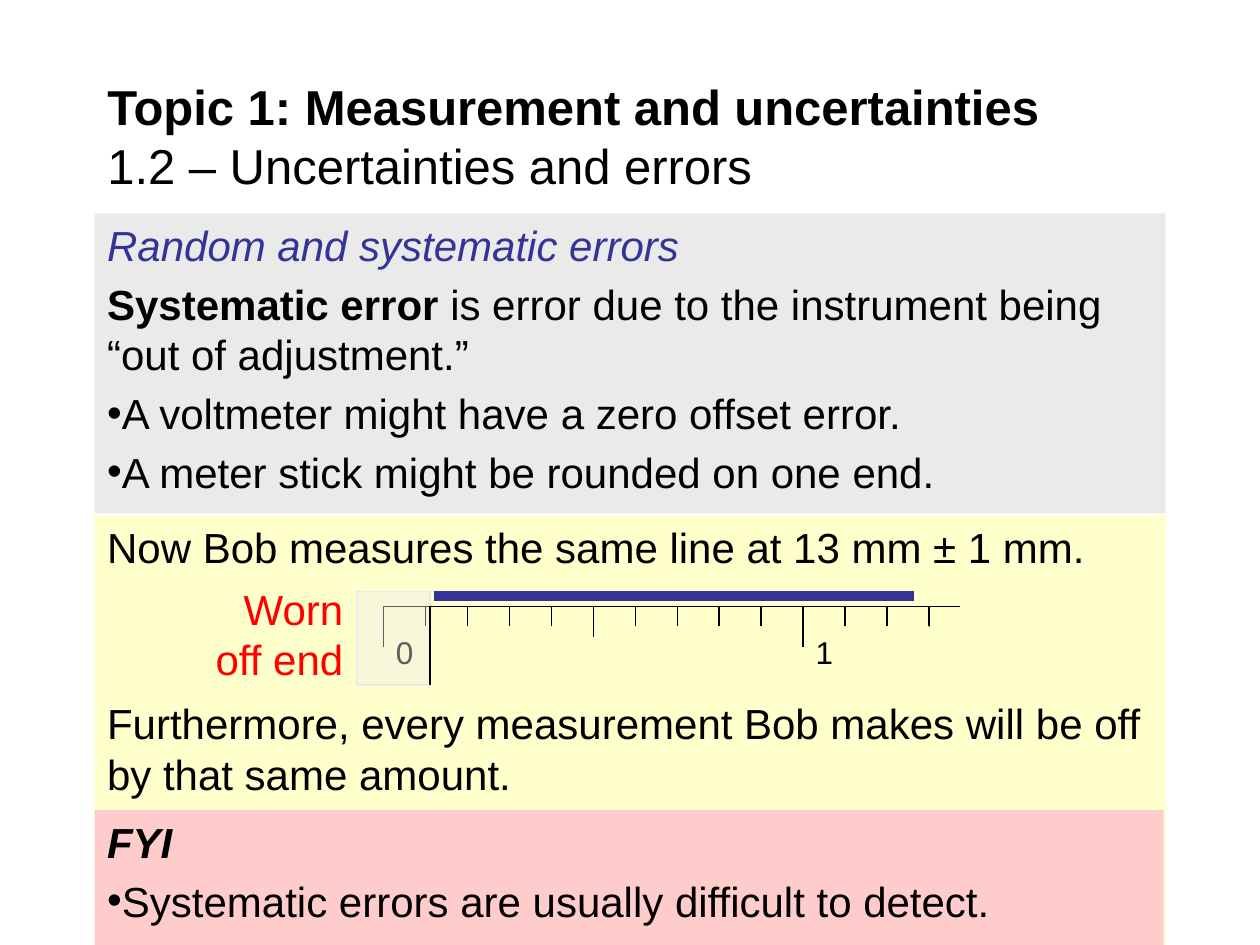
from lxml import etree
from pptx import Presentation
from pptx.dml.color import RGBColor
from pptx.enum.shapes import MSO_CONNECTOR, MSO_SHAPE
from pptx.enum.text import MSO_ANCHOR, MSO_AUTO_SIZE, PP_ALIGN
from pptx.oxml.ns import qn
from pptx.util import Cm, Pt

RECTANGLE = MSO_SHAPE.RECTANGLE
STRAIGHT = MSO_CONNECTOR.STRAIGHT
LEFT, RIGHT = PP_ALIGN.LEFT, PP_ALIGN.RIGHT
TOP, MIDDLE = MSO_ANCHOR.TOP, MSO_ANCHOR.MIDDLE
NO_AUTOFIT = MSO_AUTO_SIZE.NONE
BLACK, BLUE, RED = "000000", "333399", "FF0000"
GREY, YELLOW, PINK = "EAEAEA", "FFFFCC", "FFCCCC"


def color(value):
    """Turn a hex string into a colour."""
    return RGBColor.from_string(value)


def set_font(font, size=24, ink=BLACK, bold=False, italic=False):
    """Format a paragraph or run font."""
    font.name, font.size = "Arial", Pt(size)
    font.bold, font.italic = bold, italic
    font.color.rgb = color(ink)


def add_rectangle(page, left, top, width, height, fill=None, line=None):
    """Add a rectangle without shadow, with an optional fill and outline."""
    box = page.shapes.add_shape(RECTANGLE, Cm(left), Cm(top), Cm(width), Cm(height))
    box.shadow.inherit = False
    if fill:
        box.fill.solid()
        box.fill.fore_color.rgb = color(fill)
    else:
        box.fill.background()
    if line:
        box.line.color.rgb = color(line)
        box.line.width = Pt(0.75)
    else:
        box.line.fill.background()
    return box


def add_line(page, left, top, right, bottom, ink=BLACK, width=0.75):
    """Add a straight line without shadow."""
    line = page.shapes.add_connector(STRAIGHT, Cm(left), Cm(top), Cm(right), Cm(bottom))
    line.line.color.rgb = color(ink)
    line.line.width = Pt(width)
    etree.SubElement(line._element.spPr, qn("a:effectLst"))


def add_label(page, left, top, width, height, text, size, ink=BLACK, align=LEFT):
    """Add a wrapped text box with one paragraph."""
    label = page.shapes.add_textbox(Cm(left), Cm(top), Cm(width), Cm(height))
    label.text_frame.word_wrap = True
    para = label.text_frame.paragraphs[0]
    para.text, para.alignment = text, align
    set_font(para.font, size, ink)


def add_bullet(para):
    """Give a paragraph a tight hanging bullet."""
    properties = para._p.get_or_add_pPr()
    properties.set("marL", str(Cm(0.3)))
    properties.set("indent", str(-Cm(0.3)))
    etree.SubElement(properties, qn("a:buFont")).set("typeface", "Arial")
    etree.SubElement(properties, qn("a:buChar")).set("char", "•")


def add_panel(page, left, top, width, height, fill, lines):
    """Add a coloured panel with (text, style, bulleted, space before) lines."""
    frame = add_rectangle(page, left, top, width, height, fill).text_frame
    frame.word_wrap, frame.vertical_anchor = True, TOP
    for index, (text, style, bulleted, space) in enumerate(lines):
        para = frame.add_paragraph() if index else frame.paragraphs[0]
        para.text, para.alignment = text, LEFT
        para.space_before = Pt(space)
        set_font(para.font, **style)
        if bulleted:
            add_bullet(para)
    return frame


def place_title(page, left, top, width, height):
    """Place the two-line title in its placeholder."""
    title = page.shapes.title
    title.left, title.top = Cm(left), Cm(top)
    title.width, title.height = Cm(width), Cm(height)
    frame = title.text_frame
    frame.auto_size, frame.vertical_anchor = NO_AUTOFIT, MIDDLE
    para = frame.paragraphs[0]
    para.alignment = LEFT
    set_font(para.font, 28)
    topic = para.add_run()
    topic.text = "Topic 1: Measurement and uncertainties"
    topic.font.bold = True
    para.add_line_break()
    para.add_run().text = "1.2 – Uncertainties and errors"


def add_definition(page, left, top, width, height):
    """Add the panel that defines systematic error."""
    frame = add_panel(page, left, top, width, height, GREY, [
        ("Random and systematic errors", {"ink": BLUE, "italic": True}, False, 4.8),
        ("", {}, False, 4.8),
        ("A voltmeter might have a zero offset error.", {}, True, 4.8),
        ("A meter stick might be rounded on one end.", {}, True, 4.8),
    ])
    para = frame.paragraphs[1]
    term = para.add_run()
    term.text = "Systematic error"
    term.font.bold = True
    para.add_run().text = " is error due to the instrument being “out of adjustment.”"


def add_scale(page, left, top, step):
    """Add millimetre cells and the covers that trim them to tick marks."""
    for cell in range(13):
        add_rectangle(page, left + cell * step, top, step, step, line=BLACK)
    covers = [
        (0, -0.21, 13, 0.21),
        (0, 0.84, 13, 0.21),
        (0.5, 0.42, 4, 0.42),
        (5.5, 0.42, 4, 0.42),
        (10.75, 0.42, 2.25, 0.42),
        (4.5, 0.63, 1, 0.42),
    ]
    for start, drop, count, height in covers:
        add_rectangle(page, left + start * step, top + drop, count * step, height, YELLOW, YELLOW)


def add_ruler(page, left, top):
    """Add the worn ruler and the measured line, from the zero mark."""
    step = 11 / 13
    add_scale(page, left, top, step)
    add_line(page, left, top, left + 11.63, top)
    for number in range(2):
        add_label(page, left + number * 10 * step, top + 0.42, 0.86, 1.02, str(number), 18)
    worn = add_rectangle(page, left - 0.53, top - 0.29, 1.47, 1.88, GREY, GREY)
    shade = worn.fill._xPr.find(qn("a:solidFill"))[0]
    etree.SubElement(shade, qn("a:alpha")).set("val", "40000")
    add_label(page, left - 3.79, top - 0.59, 3.23, 2.29, "Worn off end", 24, RED, RIGHT)
    add_line(page, left + 0.94, top, left + 0.94, top + 1.59)
    add_line(page, left + 1.01, top - 0.21, left + 10.69, top - 0.21, BLUE, 6)


def add_example(page, left, top, width, height):
    """Add the panel with the measuring example."""
    add_panel(page, left, top, width, height, YELLOW, [
        ("Now Bob measures the same line at 13 mm ± 1 mm.", {}, False, 4.8),
        ("Furthermore, every measurement Bob makes will be off by that same amount.",
         {}, False, 72),
    ])
    add_ruler(page, left + 5.82, top + 1.83)


def add_note(page, left, top, width, height):
    """Add the FYI panel."""
    add_panel(page, left, top, width, height, PINK, [
        ("FYI", {"bold": True, "italic": True}, False, 4.8),
        ("Systematic errors are usually difficult to detect.", {}, True, 4.8),
    ])


def main():
    """Build and save the deck."""
    deck = Presentation()
    deck.slide_width, deck.slide_height = Cm(25.4), Cm(19.05)
    page = deck.slides.add_slide(deck.slide_layouts[5])
    place_title(page, 1.91, 1.49, 21.59, 2.49)
    add_definition(page, 1.91, 4.3, 21.59, 6.05)
    add_example(page, 1.91, 10.39, 21.59, 8.66)
    add_note(page, 1.91, 16.33, 21.55, 2.72)
    deck.save("out.pptx")


if __name__ == "__main__":
    main()
